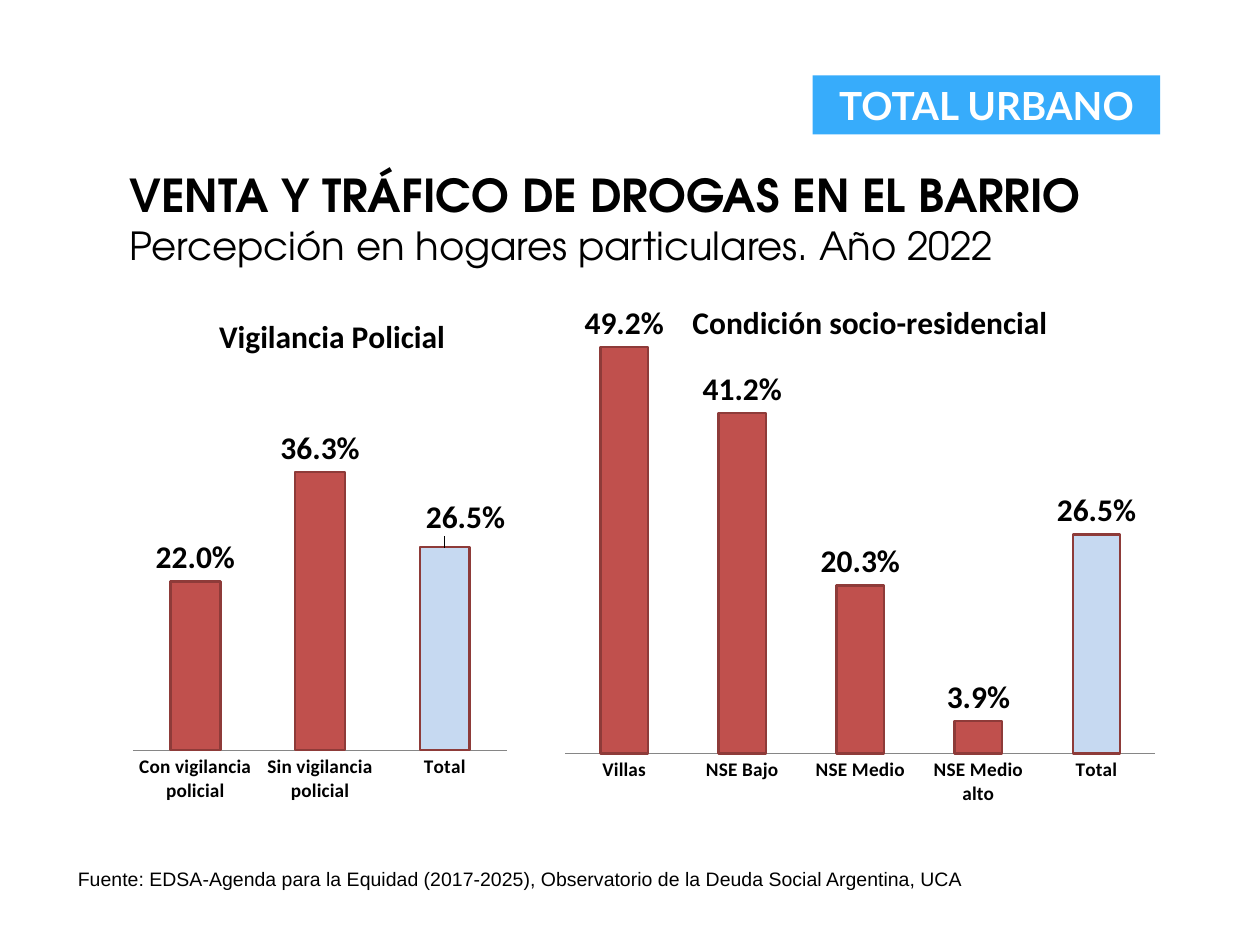
from lxml.etree import SubElement
from pptx import Presentation
from pptx.chart.data import CategoryChartData
from pptx.dml.color import RGBColor
from pptx.enum.chart import XL_CHART_TYPE, XL_LABEL_POSITION, XL_TICK_MARK
from pptx.enum.shapes import MSO_SHAPE
from pptx.enum.text import MSO_ANCHOR, PP_ALIGN
from pptx.oxml.ns import qn
from pptx.util import Cm, Pt

HUES = {
    "ink": "000000", "white": "FFFFFF", "sky": "37ACFB",
    "red": "C0504D", "edge": "8E3B39", "pale": "C6D9F1", "axis": "868686",
}
FORM = "0.0%"


def hue(name):
    return RGBColor.from_string(HUES[name])


def style(font, size, bold=False, color="ink", face="Calibri"):
    font.name, font.size, font.bold = face, Pt(size), bold
    font.color.rgb = hue(color)


def write(frame, rows, align=PP_ALIGN.LEFT):
    """Each row is (text, size, bold, color, face)."""
    frame.word_wrap = True
    for i, (text, *look) in enumerate(rows):
        para = frame.paragraphs[0] if i == 0 else frame.add_paragraph()
        para.alignment = align
        run = para.add_run()
        run.text = text
        style(run.font, *look)


def add_text(slide, spot, rows):
    box = slide.shapes.add_textbox(*map(Cm, spot))
    write(box.text_frame, rows)


def add_tag(slide, spot, row):
    tag = slide.shapes.add_shape(MSO_SHAPE.RECTANGLE, *map(Cm, spot))
    tag.shadow.inherit = False
    tag.fill.solid()
    tag.fill.fore_color.rgb = hue("sky")
    tag.line.fill.background()
    tag.text_frame.vertical_anchor = MSO_ANCHOR.MIDDLE
    write(tag.text_frame, [row], PP_ALIGN.CENTER)


def paint(form, color):
    form.fill.solid()
    form.fill.fore_color.rgb = hue(color)
    form.line.color.rgb = hue("edge")
    form.line.width = Pt(1.5)


def make_layout(marks):
    """Build a manual layout from (tag, value) pairs."""
    host = SubElement(marks[0], qn("c:layout"))
    inner = SubElement(host, qn("c:manualLayout"))
    for tag, val in marks[1]:
        SubElement(inner, qn(f"c:{tag}")).set("val", str(val))
    return host


def place_plot(chart, box):
    area = chart._chartSpace.chart.plotArea
    for old in area.findall(qn("c:layout")):
        area.remove(old)
    marks = [("layoutTarget", "inner"), ("xMode", "edge"), ("yMode", "edge")]
    area.insert(0, make_layout((area, marks + list(zip("xywh", box)))))


def shift_label(bars, at, move):
    """Nudge one data label away from its usual place."""
    label = bars.points[at].data_label
    style(label.font, 18, True)
    label.position = XL_LABEL_POSITION.OUTSIDE_END
    node = bars._element.find(f".//{qn('c:dLbl')}")
    node.insert(1, make_layout((node, zip("xy", move))))
    form = SubElement(node, qn("c:numFmt"))
    form.set("formatCode", FORM)
    form.set("sourceLinked", "0")
    node.insert(2, form)


def add_bars(slide, spot, title, pairs, box):
    data = CategoryChartData(number_format=FORM)
    data.categories = [name for name, _ in pairs]
    data.add_series("Series 1", [val for _, val in pairs])
    chart = slide.shapes.add_chart(
        XL_CHART_TYPE.COLUMN_CLUSTERED, *map(Cm, spot), data).chart
    style(chart.font, 18)
    chart.has_legend = False
    write(chart.chart_title.text_frame, [(title, 18, True)], PP_ALIGN.CENTER)
    chart.chart_title.include_in_layout = False
    place_plot(chart, box)

    # Axes
    side, base = chart.value_axis, chart.category_axis
    side.minimum_scale, side.maximum_scale = 0, 0.5
    side.has_major_gridlines = False
    side.visible = False
    base.major_tick_mark = XL_TICK_MARK.NONE
    base.format.line.color.rgb = hue("axis")
    base.format.line.width = Pt(0.75)
    style(base.tick_labels.font, 11, True)

    # Bars, with the total set apart
    plot = chart.plots[0]
    plot.gap_width, plot.overlap = 150, -25
    plot.vary_by_categories = False
    bars = plot.series[0]
    bars.invert_if_negative = False
    paint(bars.format, "red")
    paint(bars.points[len(pairs) - 1].format, "pale")

    # Labels
    tags = bars.data_labels
    tags.show_value = True
    tags.number_format, tags.number_format_is_linked = FORM, False
    tags.position = XL_LABEL_POSITION.OUTSIDE_END
    style(tags.font, 18, True)
    return bars


def main():
    deck = Presentation()
    deck.slide_width, deck.slide_height = Cm(25.4), Cm(19.05)
    slide = deck.slides.add_slide(deck.slide_layouts[6])

    # Chart by social and housing condition
    add_bars(slide, (11.23, 5.59, 12.62, 11.15), "Condición socio-residencial",
             [("Villas", 0.492), ("NSE Bajo", 0.412), ("NSE Medio", 0.203),
              ("NSE Medio alto", 0.039), ("Total", 0.265)],
             (0.013, 0.114, 0.943, 0.747))

    # Heading and tag
    face = "TeX Gyre Adventor"
    add_text(slide, (2.36, 3.25, 21.06, 2.31), [
        ("VENTA Y TRÁFICO DE DROGAS EN EL BARRIO", 25.9, True, "ink", face),
        ("Percepción en hogares particulares. Año 2022", 22.1, False, "ink", face),
    ])
    add_tag(slide, (16.38, 1.52, 7.01, 1.19),
            ("TOTAL URBANO", 22.1, True, "white", "Lato"))

    # Chart by police watch
    bars = add_bars(slide, (2.54, 5.87, 8.31, 10.85), "Vigilancia Policial",
                    [("Con vigilancia policial", 0.22),
                     ("Sin vigilancia policial", 0.363), ("Total", 0.265)],
                    (0.017, 0.141, 0.908, 0.712))
    shift_label(bars, 2, (0.05, -0.01))

    # Source line
    add_text(slide, (1.32, 17.35, 23.47, 0.74), [
        ("Fuente: EDSA-Agenda para la Equidad (2017-2025), Observatorio de la "
         "Deuda Social Argentina, UCA", 11.1, False, "ink", "Arial")])

    deck.save("out.pptx")


if __name__ == "__main__":
    main()
